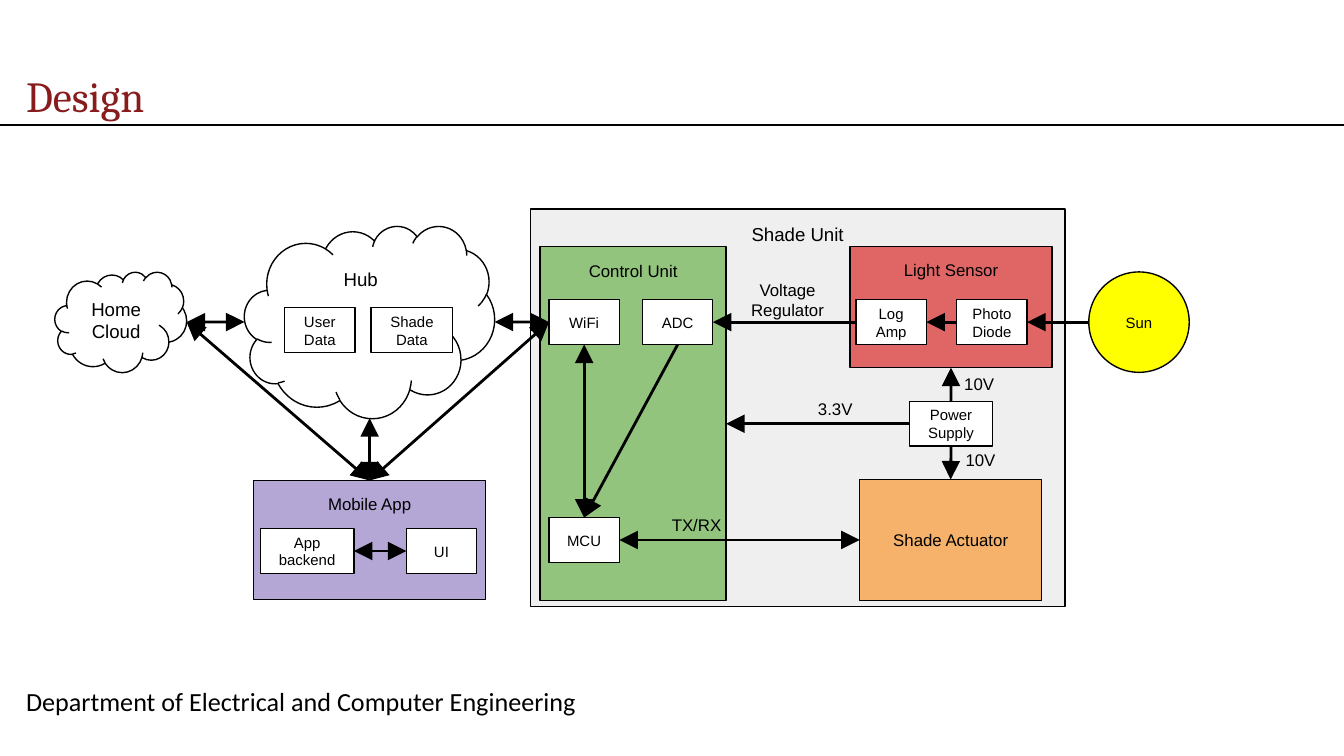
from typing import NamedTuple

from lxml.etree import SubElement
from pptx import Presentation
from pptx.dml.color import RGBColor
from pptx.enum.shapes import MSO_CONNECTOR as Connector, MSO_SHAPE as Preset
from pptx.enum.text import MSO_ANCHOR as Anchor, MSO_AUTO_SIZE as AutoSize, PP_ALIGN as Align
from pptx.oxml.ns import qn
from pptx.util import Pt

COLORS = {
    "black": "000000", "white": "FFFFFF", "maroon": "881C1C", "gray": "EFEFEF",
    "green": "93C47D", "red": "E06666", "orange": "F6B26B", "yellow": "FFFF00",
    "purple": "B4A7D6",
}
TOP, LEFT, BOTTOM, RIGHT = range(4)
CHIP_WIDTH, CHIP_HEIGHT = 37.7, 24
SENSOR_ROW, APP_ROW, DATA_ROW = 160.6, 283.2, 164.9


class Block(NamedTuple):
    text: str
    left: float
    top: float
    width: float = CHIP_WIDTH
    height: float = CHIP_HEIGHT
    fill: str = "white"
    size: float = 8
    anchor: Anchor = Anchor.MIDDLE
    preset: Preset = Preset.RECTANGLE


class Link(NamedTuple):
    start: str
    start_side: int
    end: str
    end_side: int
    two_way: bool = False


class Label(NamedTuple):
    text: str
    left: float
    top: float
    width: float = 43.9
    height: float = 23.8
    align: Align = Align.CENTER


BLOCKS = {
    "storage": Block("Hub", 131, 121, 134, 103, size=10, anchor=Anchor.TOP, preset=Preset.CLOUD),
    "shade unit": Block("Shade Unit", 284.1, 111.9, 286.4, 213.2, "gray", 10, Anchor.TOP),
    "control": Block("Control Unit", 289.3, 132.2, 99.7, 189.6, "green", 9, Anchor.TOP),
    "light": Block("Light Sensor", 455.3, 132.2, 108.3, 64.8, "red", 9, Anchor.TOP),
    "actuator": Block("Shade Actuator", 460.6, 256.9, 97.4, 64.8, "orange", 9),
    "sun": Block("Sun", 583.3, 145.7, 53.8, 53.8, "yellow", preset=Preset.OVAL),
    "app": Block("Mobile App", 135.8, 257.4, 124.4, 64, "purple", 9, Anchor.TOP),
    "wifi": Block("WiFi", 294.1, SENSOR_ROW),
    "adc": Block("ADC", 344.2, SENSOR_ROW),
    "mcu": Block("MCU", 294.1, 277.3),
    "power": Block("Power Supply", 487.4, 215, 44.2),
    "diode": Block("Photo\nDiode", 512.6, SENSOR_ROW),
    "amp": Block("Log Amp", 458.6, SENSOR_ROW),
    "ui": Block("UI", 217.7, APP_ROW),
    "backend": Block("App backend", 139.5, APP_ROW, 50.1),
    "home": Block("Home Cloud", 29.4, 145.7, 70.6, 53.8, size=10, preset=Preset.CLOUD),
    "user data": Block("User Data", 152.5, DATA_ROW),
    "shade data": Block("Shade Data", 198.8, DATA_ROW, 43.8),
}
LINKS = [
    Link("sun", LEFT, "diode", RIGHT),
    Link("diode", LEFT, "amp", RIGHT),
    Link("amp", LEFT, "adc", RIGHT),
    Link("adc", BOTTOM, "mcu", TOP),
    Link("wifi", BOTTOM, "mcu", TOP, True),
    Link("mcu", RIGHT, "actuator", LEFT, True),
    Link("power", LEFT, "control", RIGHT),
    Link("power", TOP, "light", BOTTOM),
    Link("power", BOTTOM, "actuator", TOP),
    Link("backend", RIGHT, "ui", LEFT, True),
    Link("storage", BOTTOM, "app", TOP, True),
    Link("storage", RIGHT, "wifi", LEFT, True),
    Link("app", TOP, "wifi", LEFT, True),
    Link("home", RIGHT, "storage", LEFT, True),
    Link("app", TOP, "home", RIGHT, True),
]
LABELS = [
    Label("TX/RX", 352.8, 268.6, align=Align.LEFT),
    Label("Voltage Regulator", 392.4, 142.6, 59, 44.6),
    Label("3.3V", 425.5, 206.6),
    Label("10V", 503.3, 234),
    Label("10V", 502.6, 193),
]


def color(name: str) -> RGBColor:
    return RGBColor.from_string(COLORS[name])


def write(shape, text: str, size: float, font: str = "Arial", ink: str = "black",
          align: Align = Align.CENTER, anchor: Anchor = Anchor.TOP,
          inset_x: float = 7.2, inset_y: float = 7.2) -> None:
    frame = shape.text_frame
    frame.text = text
    frame.word_wrap = True
    frame.auto_size = AutoSize.NONE
    frame.vertical_anchor = anchor
    frame.margin_left = frame.margin_right = Pt(inset_x)
    frame.margin_top = frame.margin_bottom = Pt(inset_y)
    for para in frame.paragraphs:
        para.alignment = align
        for span in para.runs:
            span.font.name = font
            span.font.size = Pt(size)
            span.font.color.rgb = color(ink)


def draw_block(page, block: Block):
    shape = page.shapes.add_shape(block.preset, Pt(block.left), Pt(block.top),
                                  Pt(block.width), Pt(block.height))
    shape.shadow.inherit = False
    shape.fill.solid()
    shape.fill.fore_color.rgb = color(block.fill)
    shape.line.color.rgb = color("black")
    shape.line.width = Pt(0.75)
    write(shape, block.text, block.size, anchor=block.anchor)
    return shape


def draw_line(page, start: tuple, end: tuple, width: float):
    line = page.shapes.add_connector(Connector.STRAIGHT, *map(Pt, start + end))
    line.line.color.rgb = color("black")
    line.line.width = Pt(width)
    SubElement(line._element.spPr, qn("a:effectLst"))
    return line


def side_middle(block: Block, side: int) -> tuple[float, float]:
    across = {LEFT: 0, RIGHT: 1}.get(side, 0.5)
    down = {TOP: 0, BOTTOM: 1}.get(side, 0.5)
    return block.left + across * block.width, block.top + down * block.height


def draw_link(page, link: Link, shapes: dict) -> None:
    """Draw an arrow between two blocks, joined to those that are rectangles."""
    start, end = BLOCKS[link.start], BLOCKS[link.end]
    arrow = draw_line(page, side_middle(start, link.start_side),
                      side_middle(end, link.end_side), 1.5)
    if start.preset == Preset.RECTANGLE:
        arrow.begin_connect(shapes[link.start], link.start_side)
    if end.preset == Preset.RECTANGLE:
        arrow.end_connect(shapes[link.end], link.end_side)
    stroke = arrow.line._get_or_add_ln()
    for tag in ("a:headEnd", "a:tailEnd") if link.two_way else ("a:tailEnd",):
        SubElement(stroke, qn(tag), type="triangle", w="lg", len="lg")


def draw_label(page, label: Label) -> None:
    box = page.shapes.add_textbox(Pt(label.left), Pt(label.top), Pt(label.width), Pt(label.height))
    write(box, label.text, 9, align=label.align)


def draw_heading(page) -> None:
    title = page.shapes.title
    title.left, title.top, title.width, title.height = map(Pt, (8.6, 34.6, 522, 32.4))
    write(title, "Design", 23, "Cambria", "maroon", Align.LEFT, inset_x=5.4, inset_y=2.7)
    draw_line(page, (0, 67), (720, 67), 0.75)
    footer = page.shapes.add_textbox(Pt(8.6), Pt(364.3), Pt(332), Pt(21.6))
    write(footer, "Department of Electrical and Computer Engineering", 14, "Calibri",
          align=Align.LEFT, inset_x=5.4, inset_y=2.7)


def main() -> None:
    deck = Presentation()
    deck.slide_width, deck.slide_height = Pt(720), Pt(405)
    page = deck.slides.add_slide(deck.slide_layouts.get_by_name("Title Only"))
    draw_heading(page)
    shapes = {name: draw_block(page, block) for name, block in BLOCKS.items()}
    for link in LINKS:
        draw_link(page, link, shapes)
    for label in LABELS:
        draw_label(page, label)
    deck.save("out.pptx")


if __name__ == "__main__":
    main()
